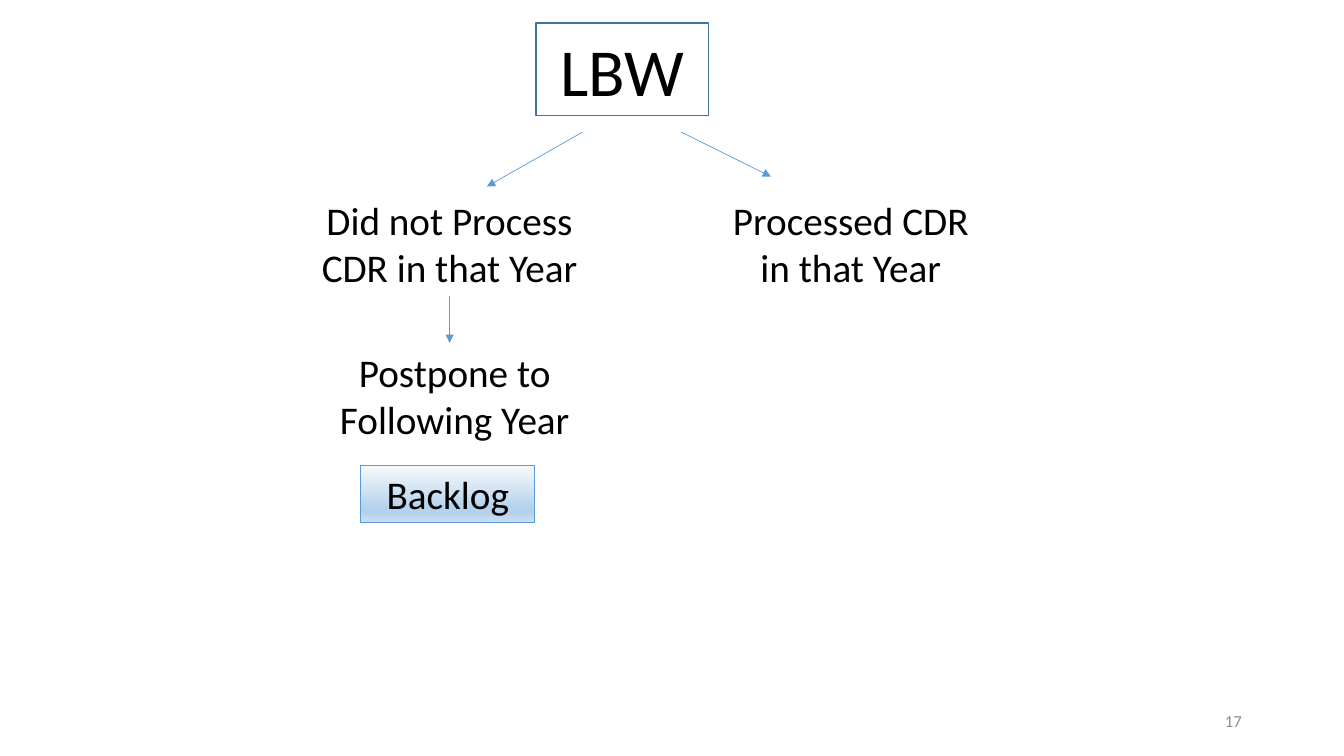
from lxml.etree import SubElement
from pptx import Presentation
from pptx.dml.color import RGBColor
from pptx.enum.shapes import MSO_CONNECTOR, MSO_SHAPE
from pptx.enum.text import MSO_ANCHOR as Anchor, PP_ALIGN as Align
from pptx.oxml.ns import qn
from pptx.util import Cm, Pt

BLACK = RGBColor(0x00, 0x00, 0x00)
WHITE = RGBColor(0xFF, 0xFF, 0xFF)
GREY = RGBColor(0x8C, 0x8C, 0x8C)
BLUE = RGBColor(0x5B, 0x9B, 0xD5)
DARK_BLUE = RGBColor(0x43, 0x73, 0x9E)
PALE_BLUE = RGBColor(0xF7, 0xFA, 0xFD)
SKY_BLUE = RGBColor(0xB5, 0xD2, 0xEC)
LIGHT_BLUE = RGBColor(0xCE, 0xE1, 0xF2)


def write(holder, wording, size=28, align=Align.CENTER, anchor=Anchor.TOP, color=BLACK):
    frame = holder.text_frame
    frame.word_wrap = True
    frame.vertical_anchor = anchor
    paragraph = frame.paragraphs[0]
    paragraph.alignment = align
    run = paragraph.add_run()
    run.text = wording
    run.font.name = "Calibri"
    run.font.size = Pt(size)
    run.font.color.rgb = color
    return paragraph


def add_box(left, top, width, height, line_color, line_width):
    box = slide.shapes.add_shape(
        MSO_SHAPE.RECTANGLE, Cm(left), Cm(top), Cm(width), Cm(height))
    box.shadow.inherit = False
    box.line.color.rgb = line_color
    box.line.width = Pt(line_width)
    return box


prs = Presentation()
prs.slide_width = Cm(33.87)
prs.slide_height = Cm(19.05)
slide = prs.slides.add_slide(prs.slide_layouts[6])

heading_frame = add_box(13.51, 0.58, 4.34, 2.34, DARK_BLUE, 1)
heading_frame.fill.solid()
heading_frame.fill.fore_color.rgb = WHITE

heading = slide.shapes.add_textbox(Cm(13.87), Cm(0.84), Cm(3.84), Cm(2.08))
write(heading, "LBW", 48, Align.LEFT, Anchor.MIDDLE).line_spacing = 0.9

page_number = slide.shapes.add_textbox(Cm(23.93), Cm(17.65), Cm(7.62), Cm(1.02))
write(page_number, "17", 12, Align.RIGHT, Anchor.MIDDLE, GREY)

for wording, left, top, width in [
    ("Did not Process CDR in that Year", 7.8, 4.83, 7.06),
    ("Processed CDR in that Year", 17.78, 4.83, 7.32),
    ("Postpone to Following Year", 7.8, 8.64, 7.32),
]:
    step = slide.shapes.add_textbox(Cm(left), Cm(top), Cm(width), Cm(2.64))
    write(step, wording)

backlog = add_box(9.09, 11.73, 4.39, 1.45, BLUE, 0.75)
backlog.fill.gradient()
backlog.fill.gradient_angle = 270
stops = backlog.element.spPr.find(qn("a:gradFill")).find(qn("a:gsLst"))
for stop in list(stops):
    stops.remove(stop)
for percent, shade in [(0, PALE_BLUE), (74, SKY_BLUE), (83, SKY_BLUE), (100, LIGHT_BLUE)]:
    stop = SubElement(stops, qn("a:gs"), pos=str(percent * 1000))
    SubElement(stop, qn("a:srgbClr"), val=str(shade))
write(backlog, "Backlog")

for start_x, start_y, end_x, end_y in [
    (14.68, 3.33, 12.27, 4.7),
    (17.17, 3.33, 19.43, 4.45),
    (11.33, 7.47, 11.33, 8.64),
]:
    arrow = slide.shapes.add_connector(
        MSO_CONNECTOR.STRAIGHT, Cm(start_x), Cm(start_y), Cm(end_x), Cm(end_y))
    arrow.line.color.rgb = BLUE
    arrow.line.width = Pt(0.5)
    outline = arrow.element.spPr.find(qn("a:ln"))
    SubElement(outline, qn("a:tailEnd"), type="triangle")
    SubElement(arrow.element.spPr, qn("a:effectLst"))

prs.save("out.pptx")
